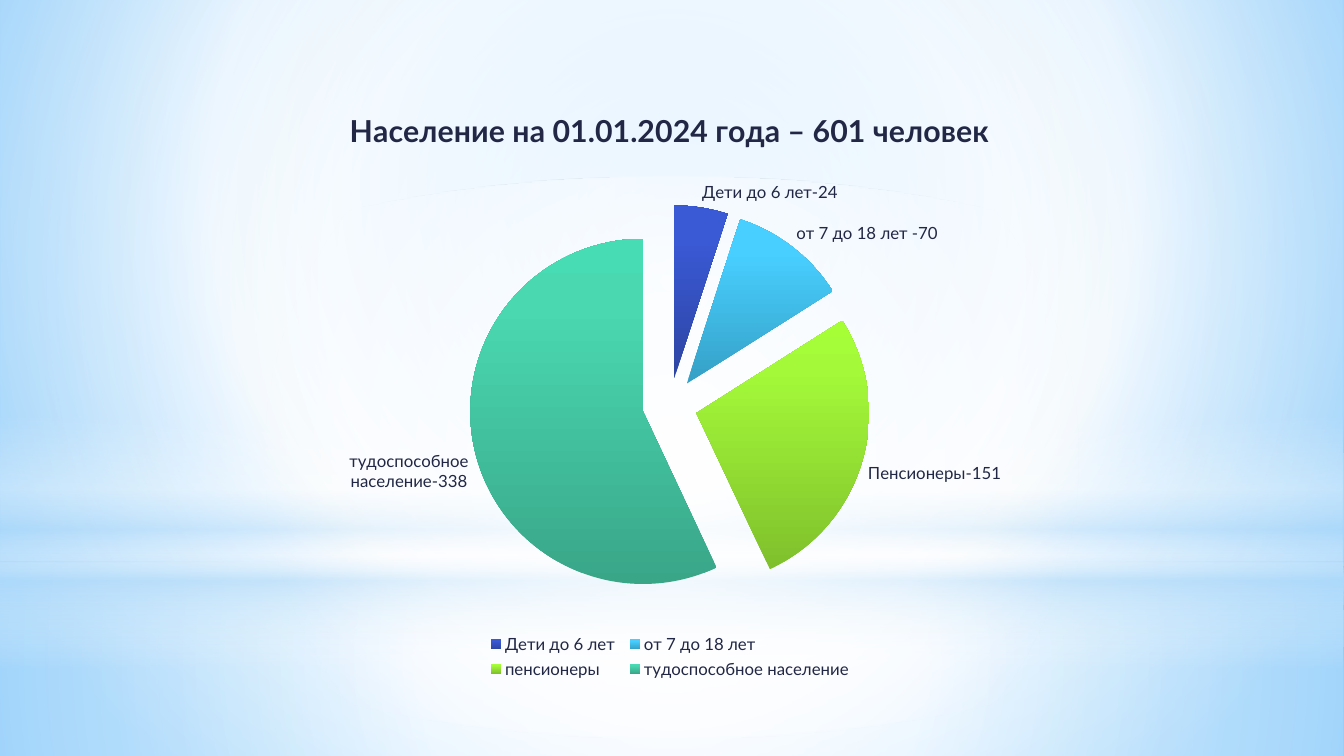
from dataclasses import dataclass

from lxml import etree
from pptx import Presentation
from pptx.chart.data import CategoryChartData
from pptx.dml.color import RGBColor
from pptx.enum.chart import XL_CHART_TYPE, XL_LABEL_POSITION, XL_LEGEND_POSITION
from pptx.enum.shapes import MSO_SHAPE
from pptx.oxml import parse_xml
from pptx.oxml.ns import nsdecls, qn
from pptx.util import Inches, Pt

PIE = XL_CHART_TYPE.PIE
OUTSIDE_END = XL_LABEL_POSITION.OUTSIDE_END
LEGEND_BOTTOM = XL_LEGEND_POSITION.BOTTOM
RECTANGLE = MSO_SHAPE.RECTANGLE
OVAL = MSO_SHAPE.OVAL
FILL_TAGS = [qn(f"a:{kind}") for kind in ("noFill", "solidFill", "gradFill")]

WIDTH, HEIGHT = 13.33, 7.5
CENTER = (50, 50, 50, 50)


@dataclass(frozen=True)
class Theme:
    font: str = "Lato"
    ink: str = "212745"
    white: str = "FFFFFF"
    haze: str = "B4DCFA"
    sky: str = "9ED5FF"
    deep_sky: str = "5BB9FF"
    title_size: float = 21.6
    label_size: float = 12


THEME = Theme()

# Category, share in percent, slice label, gradient colours from bottom to top
POPULATION = [
    ("Дети до 6 лет", 5, "Дети до 6 лет-24", ("2D45A3", "3A59D4", "3758D7")),
    ("от 7 до 18 лет", 11, "от 7 до 18 лет -70", ("35A0C6", "48CFFF", "49CFFF")),
    ("пенсионеры", 27, "Пенсионеры-151", ("7FC02C", "A4F939", "A6FE36")),
    ("тудоспособное население", 57, "тудоспособное население-338",
     ("39A688", "4AD8B1", "47DCB3")),
]


def gradient(stops, angle=None, focus=CENTER):
    """Gradient of (position, colour, opacity) stops, linear if an angle is given, else circular."""
    stop_xml = "".join(
        f'<a:gs pos="{position * 1000}"><a:srgbClr val="{color}">'
        f'<a:alpha val="{opacity * 1000}"/></a:srgbClr></a:gs>'
        for position, color, opacity in stops)
    if angle is None:
        sides = " ".join(f'{side}="{value * 1000}"' for side, value in zip("ltrb", focus))
        direction = f'<a:path path="circle"><a:fillToRect {sides}/></a:path>'
    else:
        direction = f'<a:lin ang="{angle * 60000}" scaled="0"/>'
    return parse_xml(f'<a:gradFill {nsdecls("a")} rotWithShape="1">'
                     f'<a:gsLst>{stop_xml}</a:gsLst>{direction}</a:gradFill>')


def replace_fill(properties, new_fill):
    for child in properties:
        if child.tag in FILL_TAGS:
            properties.replace(child, new_fill)
            return


def set_layout(element, x, y, width, height, inner=False):
    """Place a chart part by fractions of the chart frame."""
    for old_layout in element.findall(qn("c:layout")):
        element.remove(old_layout)
    layout = parse_xml(f'<c:layout {nsdecls("c")}><c:manualLayout/></c:layout>')
    settings = [("layoutTarget", "inner")] if inner else []
    settings += [("xMode", "edge"), ("yMode", "edge"),
                 ("x", x), ("y", y), ("w", width), ("h", height)]
    for name, value in settings:
        etree.SubElement(layout[0], qn(f"c:{name}")).set("val", str(value))
    position = 1 if element.tag == qn("c:legend") else 0
    element.insert(position, layout)


def format_font(font, size, bold=False):
    font.name = THEME.font
    font.size = Pt(size)
    font.bold = bold
    font.color.rgb = RGBColor.from_string(THEME.ink)


def write_text(text_frame, text, size=THEME.label_size, bold=False):
    paragraph = text_frame.paragraphs[0]
    run = paragraph.add_run()
    run.text = text
    format_font(paragraph.font, size, bold)
    format_font(run.font, size, bold)


class SlideBuilder:
    def __init__(self, presentation):
        self.theme = THEME
        self.slide = presentation.slides.add_slide(presentation.slide_layouts[6])

    def background(self, stops, focus):
        fill = self.slide.background.fill
        fill.solid()
        properties = self.slide.element.find(".//" + qn("p:bgPr"))
        replace_fill(properties, gradient(stops, focus=focus))

    def glow(self, kind, top, height, stops, angle=None):
        """Full-width translucent shape."""
        shape = self.slide.shapes.add_shape(
            kind, 0, Inches(top), Inches(WIDTH), Inches(height))
        shape.shadow.inherit = False
        shape.line.fill.background()
        shape.fill.solid()
        replace_fill(shape.element.spPr, gradient(stops, angle))

    def pie(self, left, top, width, height, title, rows):
        data = CategoryChartData()
        data.categories = [row[0] for row in rows]
        data.add_series("Series 1", [row[1] for row in rows])
        chart = self.slide.shapes.add_chart(
            PIE, Inches(left), Inches(top), Inches(width), Inches(height), data).chart
        format_font(chart.font, self.theme.label_size)

        chart.has_title = True
        write_text(chart.chart_title.text_frame, title, self.theme.title_size, bold=True)
        chart.chart_title.include_in_layout = False

        chart.has_legend = True
        chart.legend.position = LEGEND_BOTTOM
        chart.legend.include_in_layout = False
        format_font(chart.legend.font, self.theme.label_size)

        plot = chart.plots[0]
        plot.vary_by_categories = True
        plot.has_data_labels = True
        labels = plot.data_labels
        labels.show_category_name = True
        labels.show_percentage = False
        labels.position = OUTSIDE_END
        format_font(labels.font, self.theme.label_size)

        series = plot.series[0]
        for index, (_, _, label, colors) in enumerate(rows):
            point = series.points[index]
            point.format.fill.solid()
            point.format.line.fill.background()
            stops = [(position, color, 100) for position, color in zip((0, 80, 100), colors)]
            replace_fill(point.format.fill._xPr, gradient(stops, angle=270))
            write_text(point.data_label.text_frame, label)
            point.data_label.position = OUTSIDE_END

        explosion = parse_xml(f'<c:explosion {nsdecls("c")} val="16"/>')
        series._element.find(qn("c:dPt")).addprevious(explosion)
        plot_area = chart._chartSpace.find(".//" + qn("c:plotArea"))
        set_layout(plot_area, 0.275, 0.2, 0.45, 0.67, inner=True)
        set_layout(chart.legend._element, 0.29, 0.91, 0.42, 0.09)


def main():
    presentation = Presentation()
    presentation.slide_width = Inches(WIDTH)
    presentation.slide_height = Inches(HEIGHT)
    builder = SlideBuilder(presentation)
    white, haze = THEME.white, THEME.haze

    builder.background([(0, THEME.sky, 100), (60, white, 100), (100, THEME.deep_sky, 100)],
                       focus=(20, 10, 20, 60))
    builder.glow(RECTANGLE, 5.58, 1.92, [(0, white, 91), (37, white, 76), (100, haze, 79)])
    builder.glow(RECTANGLE, 0, 5.58, [(0, white, 89), (48, white, 62), (100, haze, 79)])
    builder.glow(RECTANGLE, 4.12, 2.5,
                 [(0, white, 0), (29, white, 30), (45, haze, 40),
                  (55, white, 26), (65, haze, 60), (100, white, 0)], angle=90)
    builder.glow(OVAL, 1.75, 5.58, [(0, white, 100), (56, white, 0)])
    builder.pie(2.2, 0.85, 8.89, 5.93,
                "Население на 01.01.2024 года – 601 человек", POPULATION)
    presentation.save("out.pptx")


if __name__ == "__main__":
    main()
